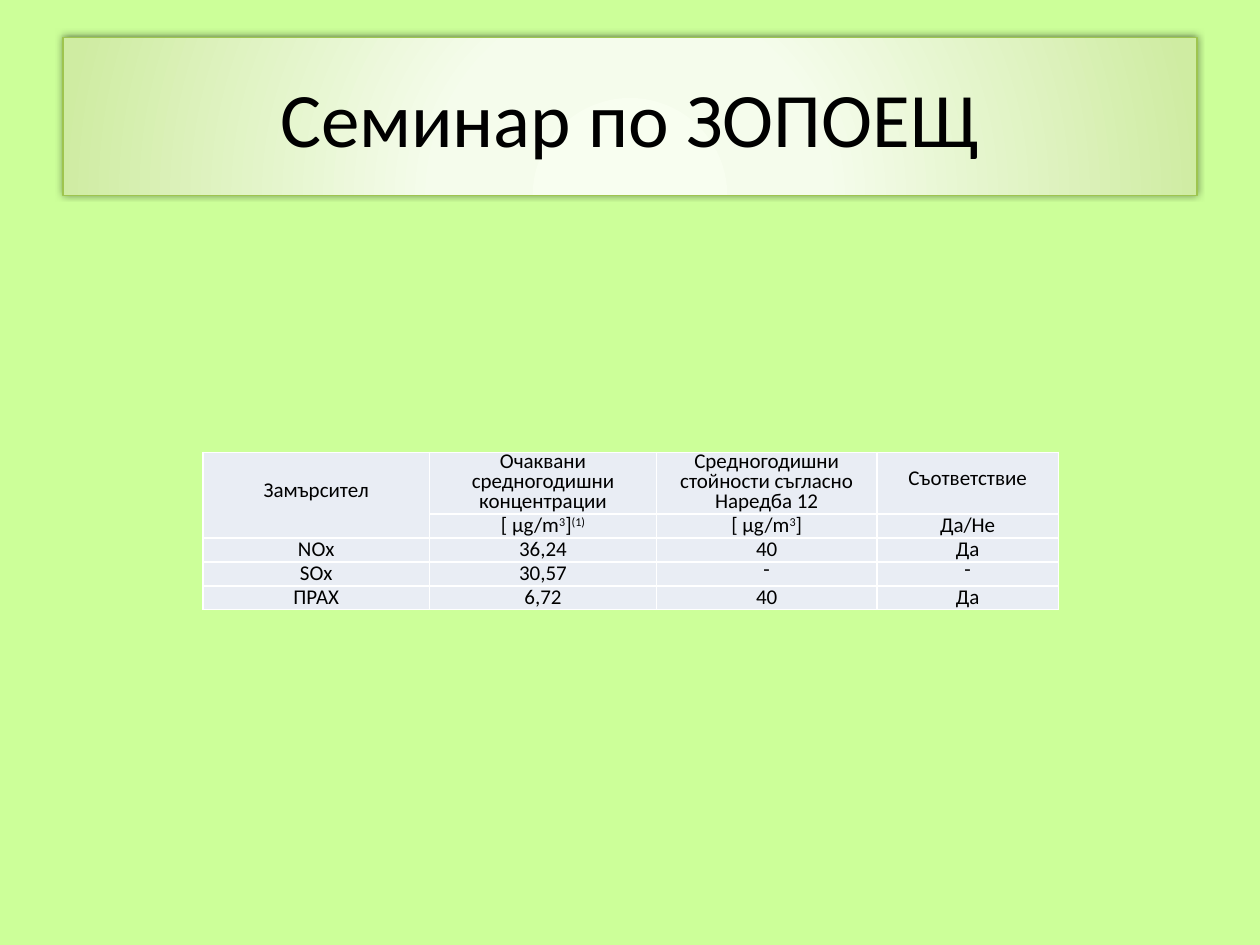
from pptx import Presentation
from pptx.dml.color import RGBColor as RGB
from pptx.enum.text import MSO_ANCHOR as Anchor, PP_ALIGN as Align
from pptx.oxml import parse_xml
from pptx.oxml.ns import nsdecls
from pptx.util import Inches, Pt

COLORS = {
    "back": "CCFF99", "text": "000000", "cell": "E9EDF4", "border": "FFFFFF",
    "edge": "9EC54F", "shade": "000000",
}
GLOW = [(0, "F8FEF0"), (34, "F5FCEC"), (100, "CFECA2")]
COLS = [1.8, 1.8, 1.75, 1.44]
ROWS = [0.49, 0.19, 0.19, 0.19, 0.19]
# Text between carets is superscript.
DATA = [
    ["Замърсител", "Очаквани\nсредногодишни\nконцентрации",
     "Средногодишни стойности съгласно Наредба 12", "Съответствие"],
    ["", "[ μg/m^3^]^(1)^", "[ μg/m^3^]", "Да/Не"],
    ["NОх", "36,24", "40", "Да"],
    ["SОх", "30,57", "-", "-"],
    ["ПРАХ", "6,72", "40", "Да"],
]
MIDDLE = {"Замърсител", "Съответствие", "-"}
CELL = {
    "margin_left": Inches(0.01), "margin_right": Inches(0.01),
    "margin_top": 0, "margin_bottom": 0,
}


def set_all(item, values):
    for name, value in values.items():
        setattr(item, name, value)


def style_font(font, size):
    set_all(font, {"name": "Calibri", "size": Pt(size)})
    font.color.rgb = RGB.from_string(COLORS["text"])


def paint(fill, color):
    fill.solid()
    fill.fore_color.rgb = RGB.from_string(COLORS[color])


def add_glow(shape):
    """Give the shape a round gradient, a thin edge and a soft shadow."""
    stops = "".join(
        f'<a:gs pos="{pos * 1000}"><a:srgbClr val="{color}"/></a:gs>'
        for pos, color in GLOW)
    props = shape.element.spPr
    props.append(parse_xml(
        f'<a:gradFill {nsdecls("a")} rotWithShape="1"><a:gsLst>{stops}</a:gsLst>'
        '<a:path path="circle"><a:fillToRect l="50000" t="155000" '
        'r="50000" b="-55000"/></a:path></a:gradFill>'))
    shape.line.width = Pt(0.75)
    paint(shape.line.fill, "edge")
    props.append(parse_xml(
        f'<a:effectLst {nsdecls("a")}><a:outerShdw blurRad="{Pt(5)}" '
        f'dist="{Pt(2)}" dir="{245 * 60000}" algn="ctr" rotWithShape="0">'
        f'<a:srgbClr val="{COLORS["shade"]}"><a:alpha val="50000"/></a:srgbClr>'
        '</a:outerShdw></a:effectLst>'))


def add_title(slide, text):
    title = slide.shapes.title
    set_all(title, {"left": Inches(0.5), "top": Inches(0.3),
                    "width": Inches(9), "height": Inches(1.25)})
    add_glow(title)
    frame = title.text_frame
    frame.text = text
    frame.vertical_anchor = Anchor.MIDDLE
    para = frame.paragraphs[0]
    para.alignment = Align.CENTER
    style_font(para.runs[0].font, 44)


def add_borders(cell):
    props = cell._tc.get_or_add_tcPr()
    for side in "LRTB":
        props.append(parse_xml(
            f'<a:ln{side} {nsdecls("a")} w="{Pt(1)}"><a:solidFill>'
            f'<a:srgbClr val="{COLORS["border"]}"/></a:solidFill></a:ln{side}>'))


def write_line(para, text, space):
    set_all(para, {"alignment": Align.CENTER, "line_spacing": Pt(space)})
    props = para._p.get_or_add_pPr()
    props.set("marL", "0")
    props.set("indent", str(Inches(-0.26)))
    for i, part in enumerate(text.split("^")):
        if part:
            run = para.add_run()
            run.text = part
            style_font(run.font, 12)
            if i % 2:
                run.font._element.set("baseline", "30000")


def fill_cell(cell, text, space):
    set_all(cell, CELL)
    cell.vertical_anchor = Anchor.MIDDLE if text in MIDDLE else Anchor.BOTTOM
    add_borders(cell)
    paint(cell.fill, "cell")
    frame = cell.text_frame
    for i, line in enumerate(text.split("\n")):
        para = frame.add_paragraph() if i else frame.paragraphs[0]
        write_line(para, line, space)


def add_grid(slide):
    table = slide.shapes.add_table(
        len(ROWS), len(COLS), Inches(1.61), Inches(3.59),
        Inches(sum(COLS)), Inches(sum(ROWS))).table
    set_all(table, {"first_row": False, "horz_banding": False})
    for col, width in zip(table.columns, COLS):
        col.width = Inches(width)
    for row, height in zip(table.rows, ROWS):
        row.height = Inches(height)
    for r, texts in enumerate(DATA):
        for c, text in enumerate(texts):
            tall = r == 0 and c in (1, 2)
            fill_cell(table.cell(r, c), text, 11.5 if tall else 9.5)
    table.cell(0, 0).merge(table.cell(1, 0))


def main():
    deck = Presentation()
    set_all(deck, {"slide_width": Inches(10), "slide_height": Inches(7.5)})
    slide = deck.slides.add_slide(deck.slide_layouts[5])
    paint(slide.background.fill, "back")
    add_title(slide, "Семинар по ЗОПОЕЩ")
    add_grid(slide)
    deck.save("out.pptx")


if __name__ == "__main__":
    main()
